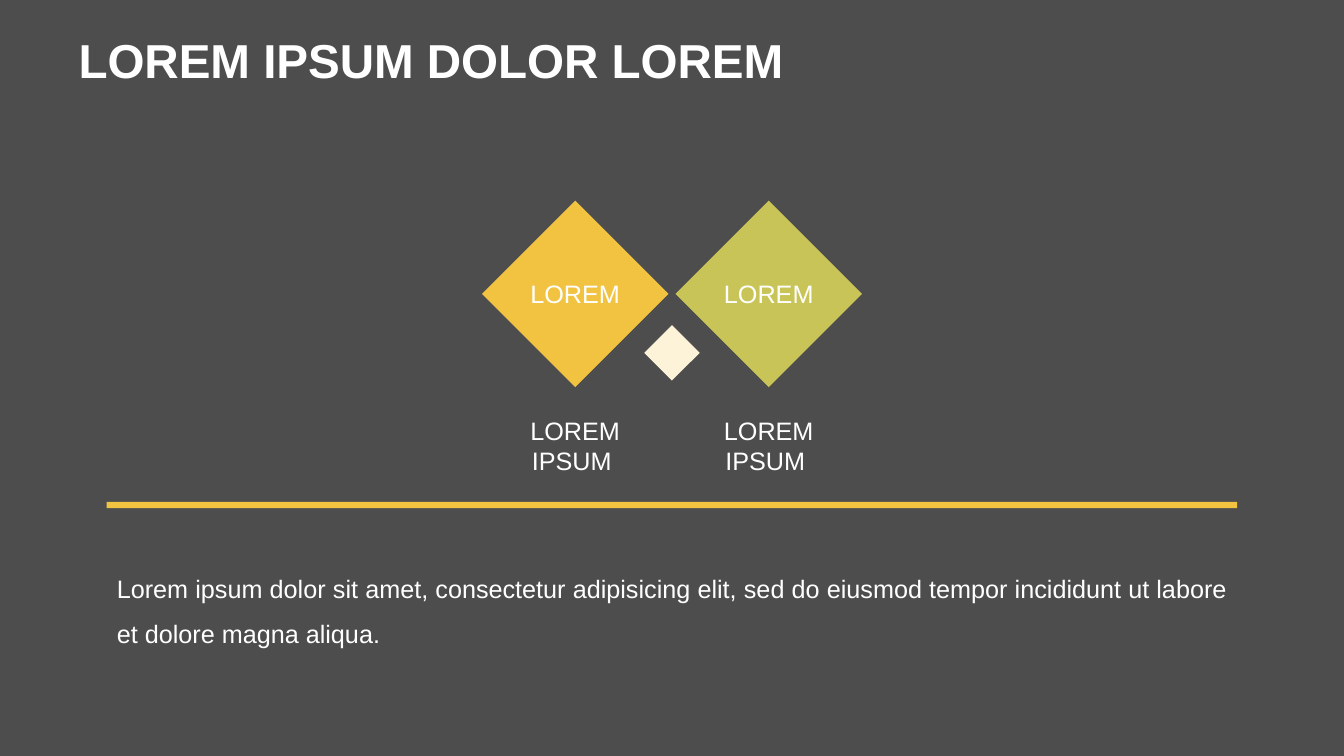
from lxml import etree
from pptx import Presentation
from pptx.dml.color import RGBColor
from pptx.enum.shapes import MSO_SHAPE
from pptx.enum.text import MSO_ANCHOR, MSO_AUTO_SIZE, PP_ALIGN
from pptx.oxml.ns import qn
from pptx.util import Inches, Pt

DIAMOND = MSO_SHAPE.DIAMOND
RECTANGLE = MSO_SHAPE.RECTANGLE
TOP = MSO_ANCHOR.TOP
MIDDLE = MSO_ANCHOR.MIDDLE
FIXED_SIZE = MSO_AUTO_SIZE.NONE
LEFT = PP_ALIGN.LEFT
CENTER = PP_ALIGN.CENTER
JUSTIFY = PP_ALIGN.JUSTIFY

COLUMNS, ROWS = 160, 90
COLORS = {
    "background": "4D4D4D",
    "text": "FFFFFF",
    "gold": "F1C341",
    "olive": "C9C457",
    "cream": "FCF3D9",
}


class SlideBuilder:
    font_name = "Arial"
    text_size = 18
    title_size = 34

    def __init__(self, presentation):
        self.column = presentation.slide_width / COLUMNS
        self.row = presentation.slide_height / ROWS
        self.slide = presentation.slides.add_slide(presentation.slide_layouts[1])
        self.paint(self.slide.background.fill, "background")

    def box(self, left, top, width, height):
        return (round(left * self.column), round(top * self.row),
                round(width * self.column), round(height * self.row))

    def paint(self, fill, color):
        fill.solid()
        fill.fore_color.rgb = RGBColor.from_string(COLORS[color])

    def set_text(self, shape, text, align, anchor, size=text_size, bold=False, spacing=1.0):
        frame = shape.text_frame
        frame.text = text
        frame.word_wrap = True
        frame.auto_size = FIXED_SIZE
        frame.vertical_anchor = anchor
        paragraph = frame.paragraphs[0]
        paragraph.alignment = align
        paragraph.line_spacing = spacing
        paragraph.space_before = Pt(0)
        paragraph.font.name = self.font_name
        paragraph.font.size = Pt(size)
        paragraph.font.bold = bold
        paragraph.font.color.rgb = RGBColor.from_string(COLORS["text"])

    def place(self, shape, *area):
        shape.left, shape.top, shape.width, shape.height = self.box(*area)

    def title(self, text, *area):
        shape = self.slide.shapes.title
        self.place(shape, *area)
        self.set_text(shape, text, LEFT, MIDDLE, self.title_size, True, 0.9)

    def body(self, text, *area):
        shape = self.slide.placeholders[1]
        self.place(shape, *area)
        self.set_text(shape, text, JUSTIFY, MIDDLE, spacing=1.5)
        properties = shape.text_frame.paragraphs[0]._p.get_or_add_pPr()
        properties.set("marL", "0")
        properties.set("indent", "0")
        no_bullet = etree.Element(qn("a:buNone"))
        properties.find(qn("a:defRPr")).addprevious(no_bullet)

    def label(self, text, *area):
        self.set_text(self.slide.shapes.add_textbox(*self.box(*area)), text, CENTER, TOP)

    def block(self, kind, color, *area):
        shape = self.slide.shapes.add_shape(kind, *self.box(*area))
        shape.shadow.inherit = False
        self.paint(shape.fill, color)
        shape.line.fill.background()
        return shape

    def diamond(self, text, color, *area):
        shape = self.block(DIAMOND, color, *area)
        frame = shape.text_frame
        frame.margin_left = frame.margin_right = frame.margin_top = frame.margin_bottom = 0
        self.set_text(shape, text, CENTER, MIDDLE)


def main():
    presentation = Presentation()
    presentation.slide_width = Inches(13.333)
    presentation.slide_height = Inches(7.5)
    builder = SlideBuilder(presentation)

    middle = COLUMNS / 2
    diamond_size, diamond_top, pitch = 22.2, 23.88, 23.04
    label_width, accent_size = 21.24, 6.6
    margin = 12.7
    content_width = COLUMNS - 2 * margin

    builder.title("LOREM IPSUM DOLOR LOREM", 8.15, 2.28, 143.75, 10.44)
    builder.body(
        "Lorem ipsum dolor sit amet, consectetur adipisicing elit, "
        "sed do eiusmod tempor incididunt ut labore et dolore magna aliqua. ",
        margin, 63.72, content_width, 16.2)
    builder.block(RECTANGLE, "gold", margin, 59.76, content_width, 0.75)

    for side, color in ((-0.5, "gold"), (0.5, "olive")):
        center = middle + side * pitch
        builder.label("LOREM IPSUM ", center - label_width / 2, 48.84, label_width, 10.68)
        builder.diamond("LOREM", color, center - diamond_size / 2, diamond_top,
                        diamond_size, diamond_size)

    builder.block(DIAMOND, "cream", middle - accent_size / 2, 38.7, accent_size, accent_size)
    presentation.save("out.pptx")


if __name__ == "__main__":
    main()
